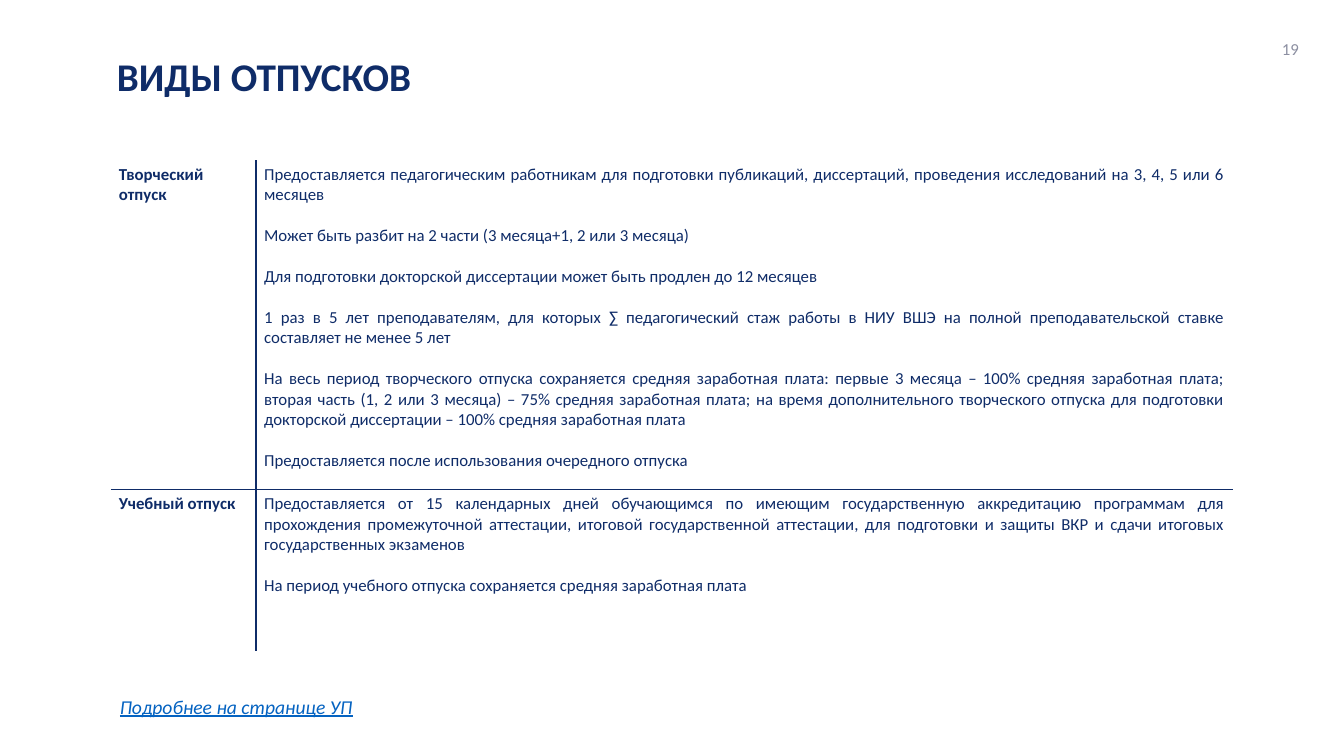
from lxml import etree
from pptx import Presentation, util as u
from pptx.dml.color import RGBColor
from pptx.enum import text
from pptx.oxml import ns

NAVY = RGBColor(0x0F, 0x2C, 0x68)
GREY = RGBColor(0x8C, 0x8F, 0xA1)
LINK_BLUE = RGBColor(0x05, 0x63, 0xC1)
WHITE = RGBColor(0xFF, 0xFF, 0xFF)
FONT = "Calibri"
LEFT, JUSTIFY, RIGHT = (text.PP_ALIGN.LEFT, text.PP_ALIGN.JUSTIFY,
                        text.PP_ALIGN.RIGHT)
PARAGRAPH_GAP = u.Pt(14.6)
COLUMN_WIDTHS = (1.44, 9.69)
ROW_HEIGHTS = (3.27, 1.6)

LEAVES = [
    ("Творческий отпуск", JUSTIFY, [
        "Предоставляется педагогическим работникам для подготовки публикаций, "
        "диссертаций, проведения исследований на 3, 4, 5 или 6 месяцев",
        "Может быть разбит на 2 части (3 месяца+1, 2 или 3 месяца)",
        "Для подготовки докторской диссертации может быть продлен до 12 месяцев",
        "1 раз в 5 лет преподавателям, для которых ∑ педагогический стаж работы "
        "в НИУ ВШЭ на полной преподавательской ставке составляет не менее 5 лет",
        "На весь период творческого отпуска сохраняется средняя заработная плата: "
        "первые 3 месяца – 100% средняя заработная плата; вторая часть (1, 2 или "
        "3 месяца) – 75% средняя заработная плата; на время дополнительного "
        "творческого отпуска для подготовки докторской диссертации – 100% "
        "средняя заработная плата",
        "Предоставляется после использования очередного отпуска",
    ]),
    ("Учебный отпуск", LEFT, [
        "Предоставляется от 15 календарных дней обучающимся по имеющим "
        "государственную аккредитацию программам для прохождения промежуточной "
        "аттестации, итоговой государственной аттестации, для подготовки и защиты "
        "ВКР и сдачи итоговых государственных экзаменов",
        "На период учебного отпуска сохраняется средняя заработная плата",
    ]),
]


def add_run(paragraph, words, size, color=NAVY, bold=False, italic=False,
            underline=False):
    run = paragraph.add_run()
    run.text = words
    font = run.font
    font.name, font.size, font.color.rgb = FONT, u.Pt(size), color
    font.bold, font.italic, font.underline = bold, italic, underline


def place(shape, left, top, width, height):
    shape.left, shape.top = u.Inches(left), u.Inches(top)
    shape.width, shape.height = u.Inches(width), u.Inches(height)


def add_title(slide, words):
    title = slide.shapes.title
    place(title, 1.13, 0.49, 12.36, 0.46)
    frame = title.text_frame
    frame.margin_left = frame.margin_right = u.Inches(0.03)
    frame.margin_top = frame.margin_bottom = u.Inches(0.03)
    frame.vertical_anchor = text.MSO_ANCHOR.TOP
    frame.auto_size = text.MSO_AUTO_SIZE.NONE
    heading = frame.paragraphs[0]
    heading.alignment, heading.line_spacing = LEFT, 1.0
    add_run(heading, words, 28, bold=True)


def add_label(slide, box, words, size, color, align=LEFT, wrap=True,
              anchor=text.MSO_ANCHOR.TOP, **style):
    frame = slide.shapes.add_textbox(*map(u.Inches, box)).text_frame
    frame.word_wrap, frame.vertical_anchor = wrap, anchor
    frame.paragraphs[0].alignment = align
    add_run(frame.paragraphs[0], words, size, color, **style)


def set_borders(cell, visible):
    properties = cell._tc.get_or_add_tcPr()
    for position, side in enumerate("LRTB"):
        line = etree.Element(ns.qn(f"a:ln{side}"), w=str(u.Pt(1)))
        if side in visible:
            fill = etree.SubElement(line, ns.qn("a:solidFill"))
            etree.SubElement(fill, ns.qn("a:srgbClr"), val=str(NAVY))
        else:
            etree.SubElement(line, ns.qn("a:noFill"))
        properties.insert(position, line)


def fill_cell(cell, paragraphs, align, borders, bold=False):
    cell.fill.solid()
    cell.fill.fore_color.rgb = WHITE
    cell.margin_left = cell.margin_right = u.Inches(0.08)
    cell.margin_top = cell.margin_bottom = u.Inches(0.04)
    frame = cell.text_frame
    for index, words in enumerate(paragraphs):
        paragraph = frame.add_paragraph() if index else frame.paragraphs[0]
        paragraph.alignment = align
        if index:
            paragraph.space_before = PARAGRAPH_GAP
        add_run(paragraph, words, 12, bold=bold)
    set_borders(cell, borders)


def add_leave_table(slide):
    table = slide.shapes.add_table(
        len(LEAVES), len(COLUMN_WIDTHS), u.Inches(1.1), u.Inches(1.59),
        u.Inches(sum(COLUMN_WIDTHS)), u.Inches(sum(ROW_HEIGHTS))).table
    table.first_row = table.horz_banding = False
    for column, width in zip(table.columns, COLUMN_WIDTHS):
        column.width = u.Inches(width)
    for row, height in zip(table.rows, ROW_HEIGHTS):
        row.height = u.Inches(height)
    for index, (leave, align, rules) in enumerate(LEAVES):
        divider = "T" if index else "B"
        fill_cell(table.cell(index, 0), [leave], align, "R" + divider, bold=True)
        fill_cell(table.cell(index, 1), rules, JUSTIFY, "L" + divider)


def main():
    deck = Presentation()
    deck.slide_width, deck.slide_height = u.Inches(13.33), u.Inches(7.5)
    slide = deck.slides.add_slide(deck.slide_layouts[5])
    add_label(slide, (12.26, 0.23, 0.72, 0.5), "19", 12, GREY, align=RIGHT,
              anchor=text.MSO_ANCHOR.MIDDLE)
    add_title(slide, "ВИДЫ ОТПУСКОВ")
    add_leave_table(slide)
    add_label(slide, (1.09, 6.84, 2.53, 0.34), "Подробнее на странице УП", 14,
              LINK_BLUE, wrap=False, italic=True, underline=True)
    deck.save("out.pptx")


if __name__ == "__main__":
    main()
